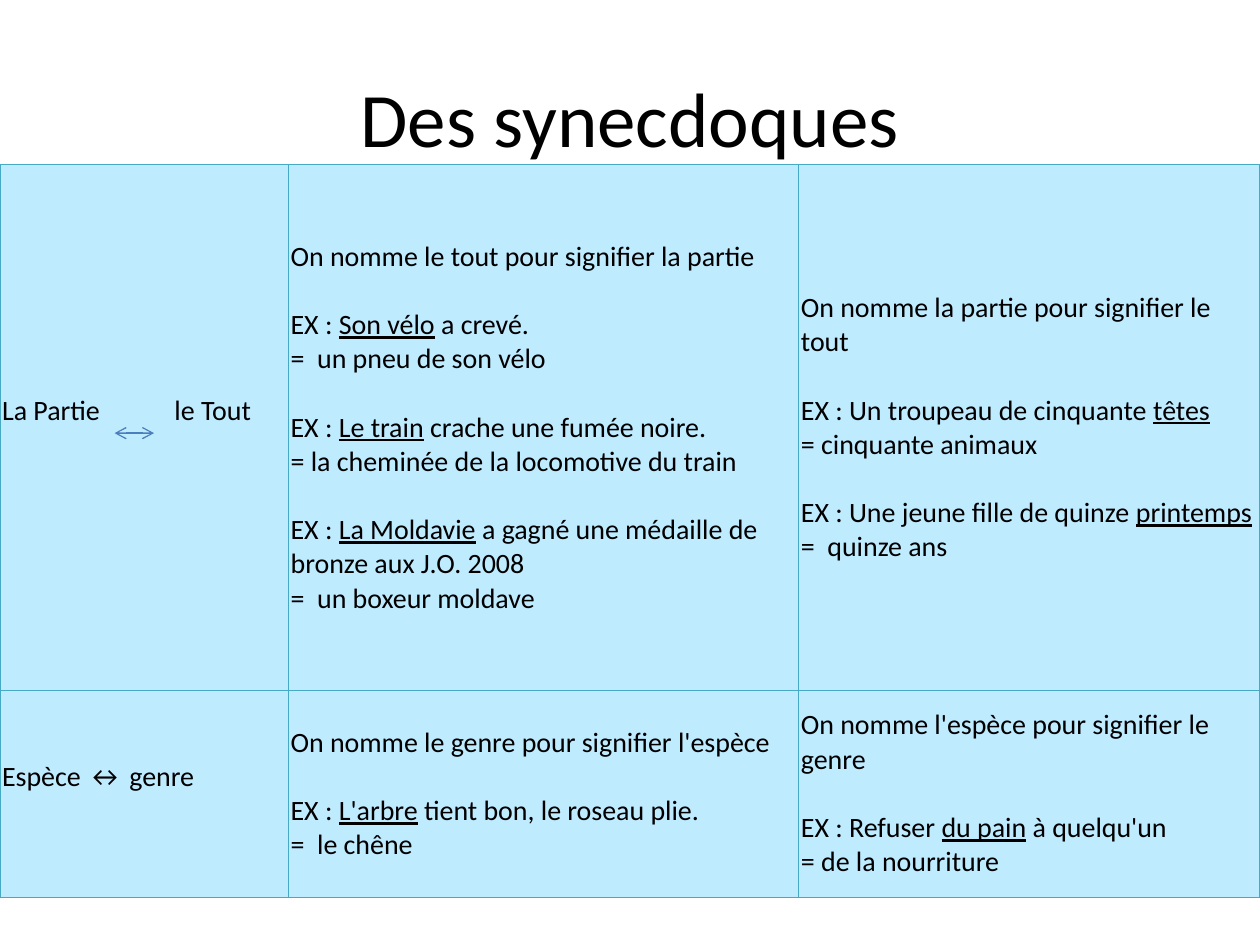
import pptx
import pptx.dml.color
import pptx.enum.shapes
import pptx.enum.text
import pptx.oxml
import pptx.oxml.ns
import pptx.util
from lxml import etree

Pt = pptx.util.Pt
MIDDLE = pptx.enum.text.MSO_ANCHOR.MIDDLE

TITLE = "Des synecdoques"

# Each cell is a list of groups of lines; underscores enclose underlined words.
ROWS = [
    [
        [["La Partie\tle Tout"]],
        [
            ["On nomme le tout pour signifier la partie"],
            ["EX : _Son vélo_ a crevé.", "=  un pneu de son vélo"],
            ["EX : _Le train_ crache une fumée noire.",
             "= la cheminée de la locomotive du train"],
            ["EX : _La Moldavie_ a gagné une médaille de bronze aux J.O. 2008",
             "=  un boxeur moldave"],
        ],
        [
            ["On nomme la partie pour signifier le tout"],
            ["EX : Un troupeau de cinquante _têtes_", "= cinquante animaux"],
            ["EX : Une jeune fille de quinze _printemps_", "=  quinze ans"],
        ],
    ],
    [
        [["Espèce ↔ genre"]],
        [
            ["On nomme le genre pour signifier l'espèce"],
            ["EX : _L'arbre_ tient bon, le roseau plie.", "=  le chêne"],
        ],
        [
            ["On nomme l'espèce pour signifier le genre"],
            ["EX : Refuser _du pain_ à quelqu'un", "= de la nourriture"],
        ],
    ],
]

TABLE_TOP = 94.2
COLUMN_WIDTHS = [164.9, 291.6, 263.5]
ROW_HEIGHTS = [300.3, 118.2]
LINE_HEIGHT = 19.5
TAB_POSITION = 98.5
ARROW = (65.5, 247.5, 88, 247.5)

COLORS = {"text": "000000", "cell": "BFEBFF", "border": "46AAC5", "arrow": "4B7EBC"}
CELL_FORMAT = {"vertical_anchor": MIDDLE, "margin_left": Pt(1.2), "margin_right": Pt(1.2),
               "margin_top": Pt(0.7), "margin_bottom": Pt(0.7)}
BODY_FONT = {"name": "Calibri", "size": Pt(16)}
TITLE_FONT = {"name": "Calibri", "size": Pt(44)}


def rgb(value):
    return pptx.dml.color.RGBColor.from_string(value)


def apply_format(target, values):
    for name, value in values.items():
        setattr(target, name, value)


def add_run(paragraph, text, font_format):
    run = paragraph.add_run()
    run.text = text
    apply_format(run.font, font_format)
    run.font.color.rgb = rgb(COLORS["text"])
    return run


def add_tab_stop(paragraph, position):
    properties = paragraph._p.get_or_add_pPr()
    tabs = etree.SubElement(properties, pptx.oxml.ns.qn("a:tabLst"))
    etree.SubElement(tabs, pptx.oxml.ns.qn("a:tab"), pos=str(Pt(position)), algn="l")


def set_borders(cell, color, width):
    properties = cell._tc.get_or_add_tcPr()
    for index, side in enumerate(("lnL", "lnR", "lnT", "lnB")):
        properties.insert(index, pptx.oxml.parse_xml(
            f'<a:{side} {pptx.oxml.ns.nsdecls("a")} w="{Pt(width)}"><a:solidFill>'
            f'<a:srgbClr val="{color}"/></a:solidFill></a:{side}>'))


def fill_cell(cell, groups):
    apply_format(cell, CELL_FORMAT)
    cell.fill.solid()
    cell.fill.fore_color.rgb = rgb(COLORS["cell"])
    set_borders(cell, COLORS["border"], 0.75)
    frame = cell.text_frame
    for group_index, lines in enumerate(groups):
        for line_index, line in enumerate(lines):
            first = group_index == line_index == 0
            paragraph = frame.paragraphs[0] if first else frame.add_paragraph()
            if "\t" in line:
                add_tab_stop(paragraph, TAB_POSITION)
            if group_index and line_index == 0:
                paragraph.space_before = Pt(LINE_HEIGHT)
            for part_index, part in enumerate(line.split("_")):
                if part:
                    run = add_run(paragraph, part, BODY_FONT)
                    run.font.underline = part_index % 2 == 1


def add_title(slide):
    title = slide.shapes.title
    apply_format(title, {"left": Pt(36), "top": Pt(21.6), "width": Pt(648), "height": Pt(90)})
    apply_format(title.text_frame, {"vertical_anchor": MIDDLE, "word_wrap": True})
    paragraph = title.text_frame.paragraphs[0]
    paragraph.alignment = pptx.enum.text.PP_ALIGN.CENTER
    add_run(paragraph, TITLE, TITLE_FONT)


def add_synecdoche_table(slide):
    table = slide.shapes.add_table(
        len(ROWS), len(COLUMN_WIDTHS), 0, Pt(TABLE_TOP),
        Pt(sum(COLUMN_WIDTHS)), Pt(sum(ROW_HEIGHTS))).table
    apply_format(table, {"first_row": False, "horz_banding": False})
    for column, width in zip(table.columns, COLUMN_WIDTHS):
        column.width = Pt(width)
    for row, height, contents in zip(table.rows, ROW_HEIGHTS, ROWS):
        row.height = Pt(height)
        for cell, groups in zip(row.cells, contents):
            fill_cell(cell, groups)
        # The row labels sit half a line above the middle.
        row.cells[0].margin_bottom = Pt(LINE_HEIGHT)


def add_double_arrow(slide):
    arrow = slide.shapes.add_connector(
        pptx.enum.shapes.MSO_CONNECTOR.STRAIGHT, *map(Pt, ARROW))
    arrow.line.width = Pt(0.75)
    arrow.line.color.rgb = rgb(COLORS["arrow"])
    line = arrow.line._get_or_add_ln()
    for end in ("a:headEnd", "a:tailEnd"):
        etree.SubElement(line, pptx.oxml.ns.qn(end), type="arrow")
    etree.SubElement(arrow._element.spPr, pptx.oxml.ns.qn("a:effectLst"))


def main():
    presentation = pptx.Presentation()
    presentation.slide_width = Pt(720)
    presentation.slide_height = Pt(540)
    slide = presentation.slides.add_slide(presentation.slide_layouts[5])
    add_title(slide)
    add_synecdoche_table(slide)
    add_double_arrow(slide)
    presentation.save("out.pptx")


if __name__ == "__main__":
    main()
